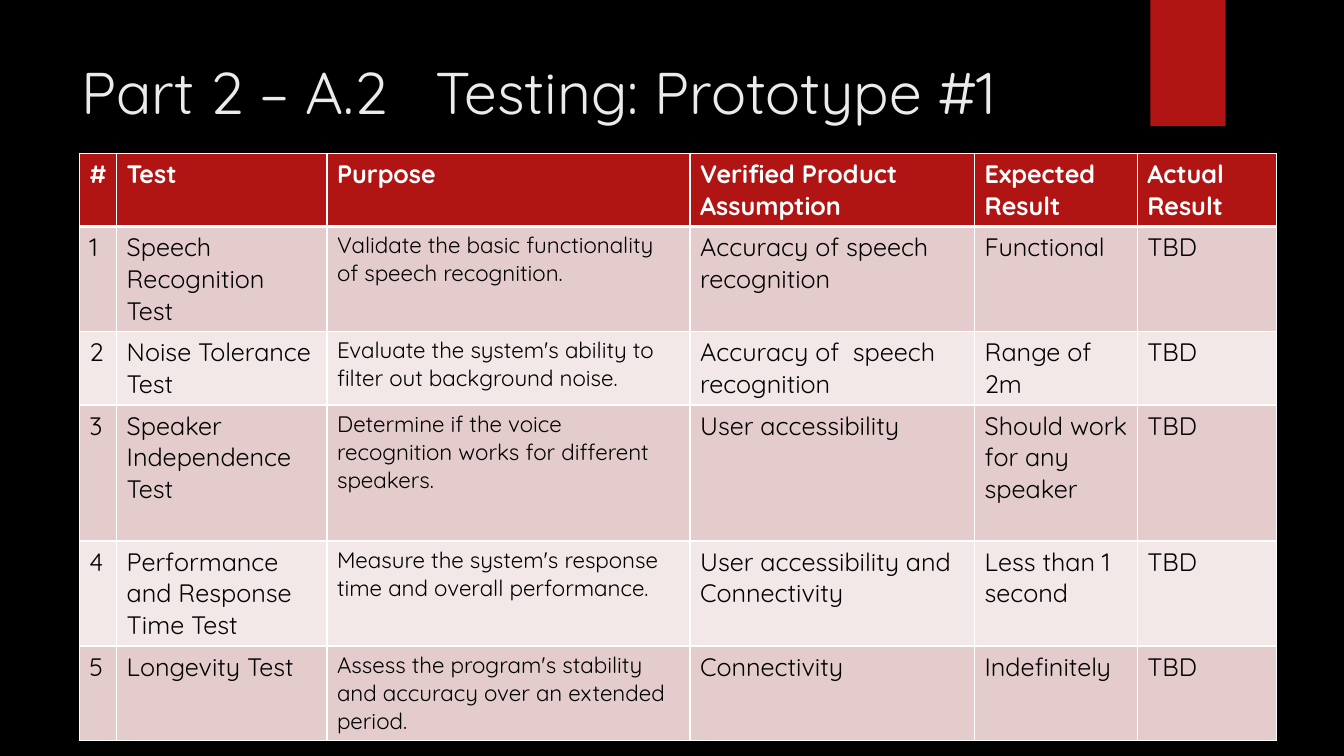
"""Build the prototype testing slide with its table of planned tests."""
from lxml.etree import fromstring
from pptx import Presentation
from pptx.dml.color import RGBColor
from pptx.enum.shapes import MSO_SHAPE
from pptx.enum.text import MSO_ANCHOR, MSO_AUTO_SIZE, PP_ALIGN
from pptx.util import Cm, Pt

FONT = "Quicksand"
BLACK, WHITE, RED, PALE = "000000", "FFFFFF", "B01513", "EBEBEB"
BANDS = ("E4CCCC", "F2E8E7")
TITLE = "Part 2 – A.2   Testing: Prototype #1"
TESTS = [
    ("#", "Test", "Purpose", "Verified Product Assumption", "Expected Result", "Actual Result"),
    ("1", "Speech Recognition Test", "Validate the basic functionality of speech recognition.",
     "Accuracy of speech recognition", "Functional", "TBD"),
    ("2", "Noise Tolerance Test", "Evaluate the system's ability to filter out background noise.",
     "Accuracy of  speech recognition", "Range of 2m", "TBD"),
    ("3", "Speaker Independence Test",
     "Determine if the voice recognition works for different speakers.",
     "User accessibility", "Should work for any speaker", "TBD"),
    ("4", "Performance and Response Time Test",
     "Measure the system's response time and overall performance.",
     "User accessibility and Connectivity", "Less than 1 second", "TBD"),
    ("5", "Longevity Test", "Assess the program's stability and accuracy over an extended period.",
     "Connectivity", "Indefinitely", "TBD"),
]
COLUMN_WIDTHS = (0.94, 5.3, 9.15, 7.17, 4.1, 3.51)
ROW_HEIGHTS = (1.85, 2.63, 1.85, 3.43, 2.63, 2.38)
PURPOSE = 2
NAMESPACE = "http://schemas.openxmlformats.org/drawingml/2006/main"


def color(value):
    return RGBColor.from_string(value)


def paint(fill, value):
    fill.solid()
    fill.fore_color.rgb = color(value)


def style(paragraph, size, value, bold=False):
    font = paragraph.font
    font.name, font.size, font.bold = FONT, Pt(size), bold
    font.color.rgb = color(value)


def add_borders(cell, top, bottom):
    properties = cell._tc.get_or_add_tcPr()
    for place, (side, points) in enumerate(zip("LRTB", (1, 1, top, bottom))):
        properties.insert(place, fromstring(
            f'<a:ln{side} xmlns:a="{NAMESPACE}" w="{Pt(points)}"><a:solidFill>'
            f'<a:srgbClr val="{WHITE}"/></a:solidFill></a:ln{side}>'))


def add_title(slide):
    title = slide.shapes.title
    title.left, title.top, title.width, title.height = Cm(1.8), Cm(1.27), Cm(26.14), Cm(3.89)
    frame = title.text_frame
    frame.text = TITLE
    frame.word_wrap, frame.auto_size = True, MSO_AUTO_SIZE.NONE
    frame.vertical_anchor = MSO_ANCHOR.TOP
    frame.paragraphs[0].alignment = PP_ALIGN.LEFT
    style(frame.paragraphs[0], 42, PALE)


def add_ribbon(slide):
    ribbon = slide.shapes.add_shape(MSO_SHAPE.RECTANGLE, Cm(28.99), 0, Cm(1.9), Cm(3.18))
    ribbon.shadow.inherit = False
    paint(ribbon.fill, RED)
    ribbon.line.fill.background()


def add_tests(slide):
    table = slide.shapes.add_table(
        len(TESTS), len(COLUMN_WIDTHS), Cm(2), Cm(3.86),
        Cm(sum(COLUMN_WIDTHS)), Cm(sum(ROW_HEIGHTS))).table
    for column, width in zip(table.columns, COLUMN_WIDTHS):
        column.width = Cm(width)
    for number, (test, height) in enumerate(zip(TESTS, ROW_HEIGHTS)):
        table.rows[number].height = Cm(height)
        header = number == 0
        for position, wording in enumerate(test):
            cell = table.cell(number, position)
            cell.text = wording
            size = 16 if position == PURPOSE and not header else 18
            style(cell.text_frame.paragraphs[0], size, WHITE if header else BLACK, header)
            paint(cell.fill, RED if header else BANDS[(number - 1) % 2])
            add_borders(cell, 3 if number == 1 else 1, 3 if header else 1)


def main():
    presentation = Presentation()
    presentation.slide_width, presentation.slide_height = Cm(33.87), Cm(19.05)
    slide = presentation.slides.add_slide(presentation.slide_layouts[5])
    paint(slide.background.fill, BLACK)
    add_ribbon(slide)
    add_title(slide)
    add_tests(slide)
    presentation.save("out.pptx")


if __name__ == "__main__":
    main()
